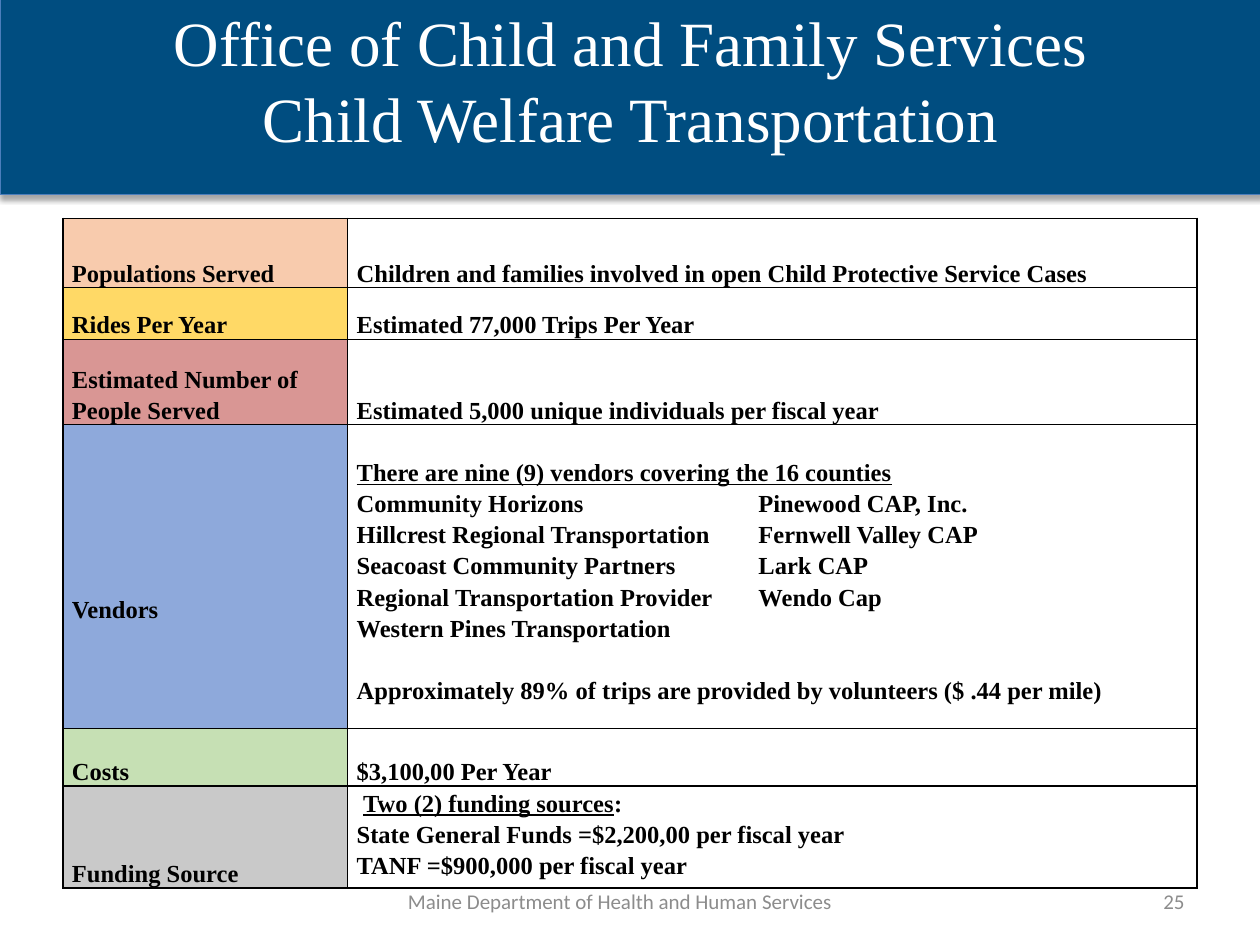
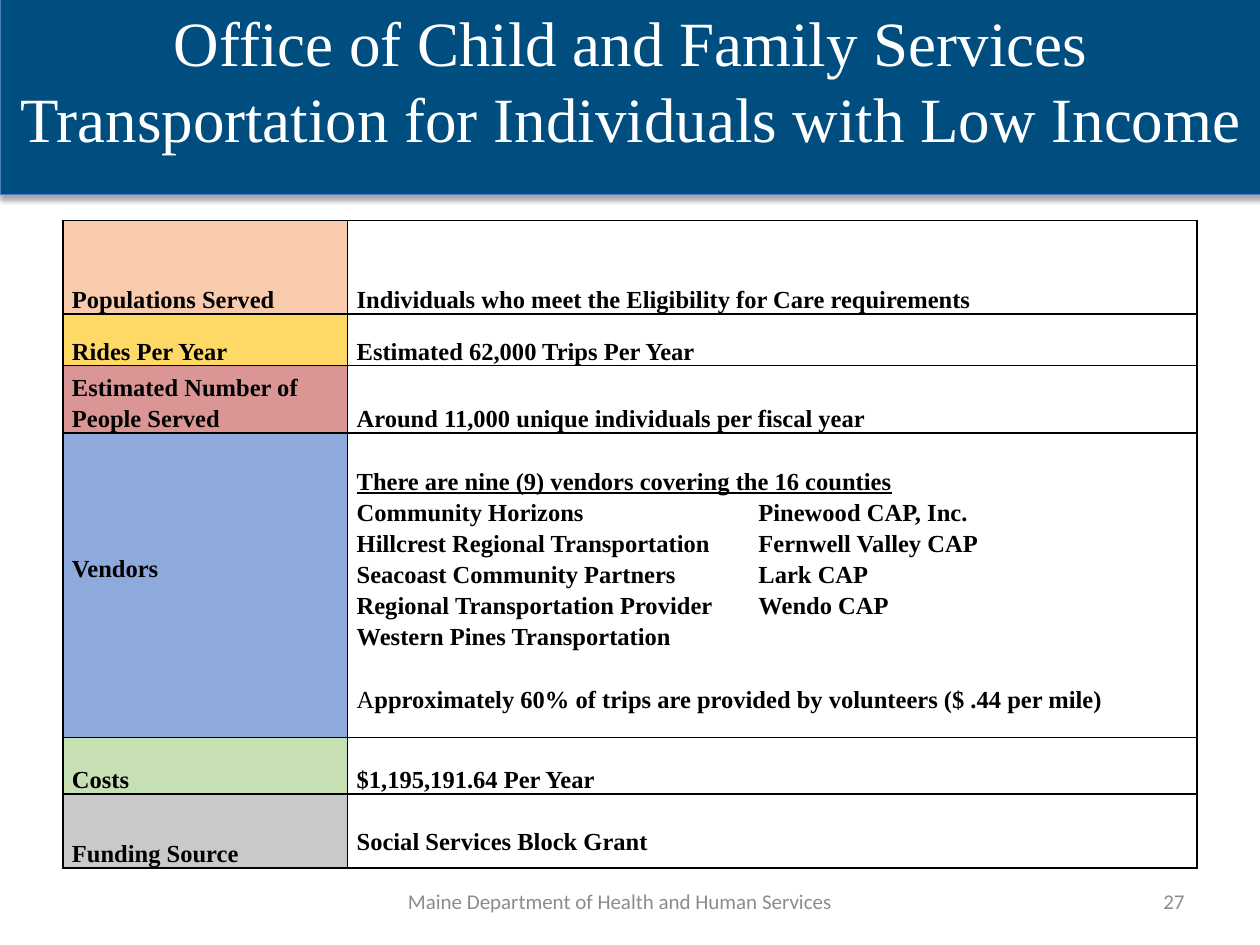
import pptx
import pptx.dml.color
import pptx.enum.shapes
import pptx.enum.text
import pptx.oxml
import pptx.oxml.ns
import pptx.util
from lxml import etree

Cm, Pt = pptx.util.Cm, pptx.util.Pt
ANCHOR, ALIGN = pptx.enum.text.MSO_ANCHOR, pptx.enum.text.PP_ALIGN

# A line is a string or a list of (text, format) runs.
OFFICE = "Office of Child and Family Services"
FOOTER = "Maine Department of Health and Human Services"
CATEGORIES = [
    ("Populations Served", "F8CBAD"),
    ("Rides Per Year", "FFD966"),
    ("Estimated Number of People Served", "D99694"),
    ("Vendors", "8EA9DB"),
    ("Costs", "C6E0B4"),
    ("Funding Source", "C9C9C9"),
]
VENDORS = [
    [("There are nine (9) vendors covering the 16 counties", {"underline": True})],
    "Community Horizons\tPinewood CAP, Inc.",
    "Hillcrest Regional Transportation\tFernwell Valley CAP",
    "Seacoast Community Partners\tLark CAP",
]
LAST_VENDOR = "Western Pines Transportation"
PROGRAMS = [
    {
        "title": "Child Welfare Transportation",
        "page": "25",
        "top": 4.4,
        "row_heights": [1.4, 1.04, 1.72, 6.13, 1.16, 2.05],
        "vendors_label_rise": 2.12,
        "funding_top": 0,
        "funding_indent": 0.13,
        "details": [
            ["Children and families involved in open Child Protective Service Cases"],
            ["Estimated 77,000 Trips Per Year"],
            ["Estimated 5,000 unique individuals per fiscal year"],
            VENDORS + [
                "Regional Transportation Provider\tWendo Cap",
                LAST_VENDOR,
                "Approximately 89% of trips are provided by volunteers ($ .44 per mile)",
            ],
            ["$3,100,00 Per Year"],
            [
                [("Two (2) funding sources", {"underline": True}), (":", {})],
                "State General Funds =$2,200,00 per fiscal year",
                "TANF =$900,000 per fiscal year",
            ],
        ],
    },
    {
        "title": "Transportation for Individuals with Low Income",
        "page": "27",
        "top": 4.45,
        "row_heights": [1.88, 1.04, 1.36, 6.13, 1.14, 1.5],
        "vendors_label_rise": 3.12,
        "funding_top": 0.63,
        "funding_indent": 0,
        "details": [
            ["Individuals who meet the Eligibility for Care requirements"],
            ["Estimated 62,000 Trips Per Year"],
            ["Around 11,000 unique individuals per fiscal year"],
            VENDORS + [
                "Regional Transportation Provider\tWendo CAP",
                LAST_VENDOR,
                [("A", {"bold": False}),
                 ("pproximately 60% of trips are provided by volunteers ($ .44 per mile)", {})],
            ],
            ["$1,195,191.64 Per Year"],
            ["Social Services Block Grant"],
        ],
    },
]

COLUMN_WIDTHS = [5.74, 17.12]
VENDORS_ROW, FUNDING_ROW = 3, 5
BLANK_LINE = 0.63
VENDOR_TAB = 8.1
TITLE_FONT = {"name": "Times New Roman", "size": Pt(36), "color": "FFFFFF"}
TABLE_FONT = {"name": "Times New Roman", "size": Pt(14), "color": "000000", "bold": True}
FOOTER_FONT = {"name": "Calibri", "size": Pt(12), "color": "8C8C8C"}


def rgb(value):
    return pptx.dml.color.RGBColor.from_string(value)


def set_attributes(target, values):
    for name, value in values.items():
        if name == "color":
            target.color.rgb = rgb(value)
        else:
            setattr(target, name, value)


def write_lines(frame, lines, font, **paragraph_format):
    """Write one paragraph per line and return the paragraphs."""
    paragraphs = []
    for index, line in enumerate(lines):
        paragraph = frame.add_paragraph() if index else frame.paragraphs[0]
        set_attributes(paragraph, paragraph_format)
        for text, changes in [(line, {})] if isinstance(line, str) else line:
            run = paragraph.add_run()
            run.text = text
            set_attributes(run.font, {**font, **changes})
        paragraphs.append(paragraph)
    return paragraphs


def add_xml(parent, xml, position=None):
    namespace = pptx.oxml.ns.nsdecls("a")
    element = pptx.oxml.parse_xml(xml.replace(" ", f" {namespace} ", 1))
    parent.insert(len(parent) if position is None else position, element)


def add_title_band(slide, title):
    band = slide.shapes.add_shape(
        pptx.enum.shapes.MSO_SHAPE.RECTANGLE, Cm(0), Cm(-0.08), Cm(25.43), Cm(4.01))
    band.fill.solid()
    band.fill.fore_color.rgb = rgb("004D80")
    set_attributes(band.line, {"color": "4B7EBC", "width": Pt(0.75)})
    band.shadow.inherit = False
    effects = band._element.spPr.find(pptx.oxml.ns.qn("a:effectLst"))
    add_xml(effects, f'<a:outerShdw blurRad="{Pt(3.1)}" dist="{Pt(1.8)}" dir="5400000" '
                     'rotWithShape="0"><a:srgbClr val="000000"><a:alpha val="35000"/>'
                     '</a:srgbClr></a:outerShdw>')
    set_attributes(band.text_frame, {
        "word_wrap": True, "vertical_anchor": ANCHOR.MIDDLE, "margin_bottom": Cm(0.78)})
    write_lines(band.text_frame, [OFFICE, title], TITLE_FONT, alignment=ALIGN.CENTER)


def add_footer_text(slide, text, left, width, alignment):
    box = slide.shapes.add_textbox(Cm(left), Cm(17.65), Cm(width), Cm(1.02))
    set_attributes(box.text_frame, {"word_wrap": True, "vertical_anchor": ANCHOR.MIDDLE})
    write_lines(box.text_frame, [text], FOOTER_FONT, alignment=alignment)


def fill_cell(cell, lines, color, **cell_format):
    """Write a cell with its borders and return its paragraphs."""
    set_attributes(cell, {
        "margin_left": Cm(0.18), "margin_right": Cm(0.18), "margin_top": 0,
        "margin_bottom": 0, "vertical_anchor": ANCHOR.BOTTOM, **cell_format})
    cell.fill.solid()
    cell.fill.fore_color.rgb = rgb(color)
    for position, side in enumerate("LRTB"):
        add_xml(cell._tc.tcPr, f'<a:ln{side} w="{Pt(1)}"><a:solidFill>'
                f'<a:srgbClr val="000000"/></a:solidFill></a:ln{side}>', position)
    return write_lines(cell.text_frame, lines, TABLE_FONT, line_spacing=1.15)


def add_program_table(slide, program):
    heights = program["row_heights"]
    table = slide.shapes.add_table(
        len(heights), len(COLUMN_WIDTHS), Cm(1.27), Cm(program["top"]),
        Cm(sum(COLUMN_WIDTHS)), Cm(sum(heights))).table
    set_attributes(table, {"first_row": False, "horz_banding": False})
    for column, width in zip(table.columns, COLUMN_WIDTHS):
        column.width = Cm(width)
    label_formats = {VENDORS_ROW: {"margin_bottom": Cm(program["vendors_label_rise"])}}
    detail_formats = {
        VENDORS_ROW: {"vertical_anchor": ANCHOR.TOP, "margin_top": Cm(BLANK_LINE)},
        FUNDING_ROW: {"vertical_anchor": ANCHOR.TOP,
                      "margin_top": Cm(program["funding_top"])},
    }
    details = []
    for index, (label, color) in enumerate(CATEGORIES):
        table.rows[index].height = Cm(heights[index])
        fill_cell(table.cell(index, 0), [label], color, **label_formats.get(index, {}))
        details.append(fill_cell(table.cell(index, 1), program["details"][index],
                                 "FFFFFF", **detail_formats.get(index, {})))
    for paragraph in details[VENDORS_ROW]:
        if "\t" in paragraph.text:
            add_xml(paragraph._p.get_or_add_pPr(),
                    f'<a:tabLst ><a:tab pos="{Cm(VENDOR_TAB)}" algn="l"/></a:tabLst>')
    details[VENDORS_ROW][-1].space_before = Pt(17.8)
    details[FUNDING_ROW][0]._p.get_or_add_pPr().set(
        "marL", str(Cm(program["funding_indent"])))


def main():
    presentation = pptx.Presentation()
    presentation.slide_width, presentation.slide_height = Cm(25.4), Cm(19.05)
    for program in PROGRAMS:
        slide = presentation.slides.add_slide(presentation.slide_layouts[6])
        add_title_band(slide, program["title"])
        add_footer_text(slide, program["page"], 18.21, 5.92, ALIGN.RIGHT)
        add_footer_text(slide, FOOTER, 7.42, 10.16, ALIGN.CENTER)
        add_program_table(slide, program)
    presentation.save("out.pptx")


if __name__ == "__main__":
    main()
